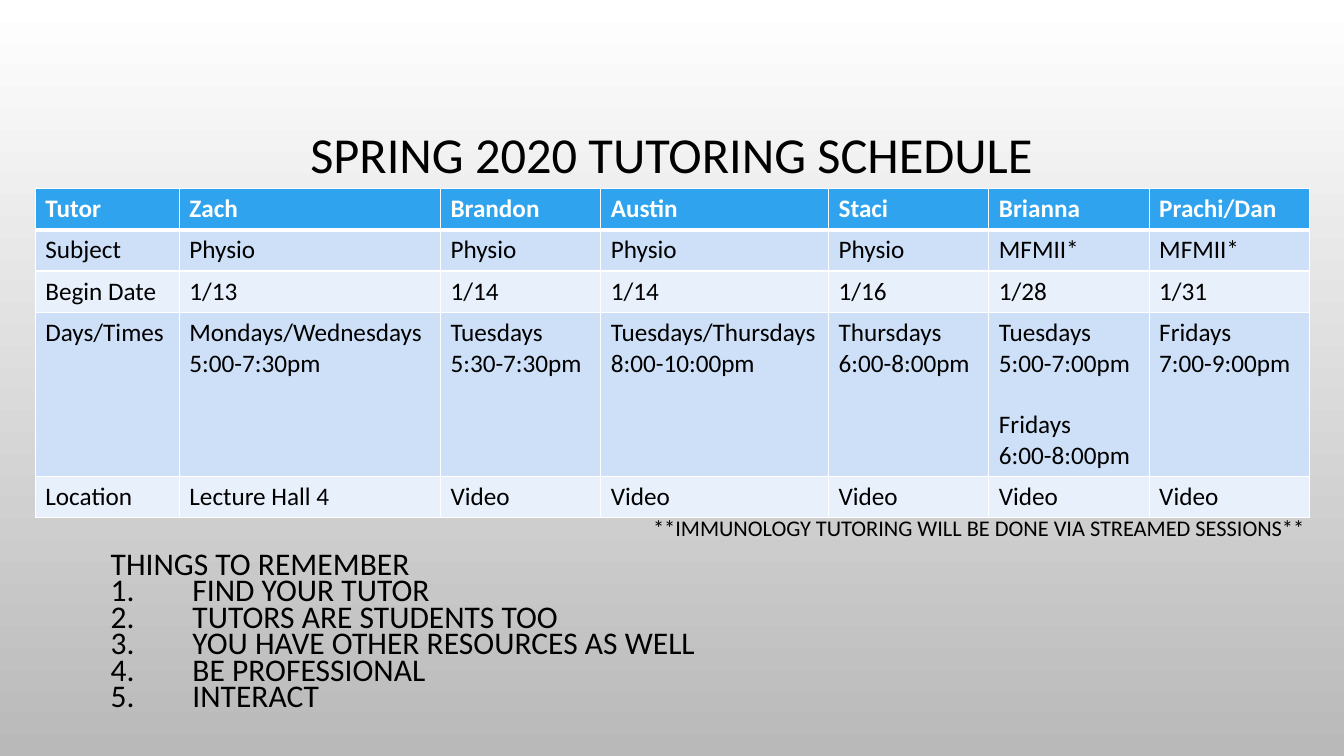
from lxml import etree
from pptx import Presentation
from pptx.dml.color import RGBColor
from pptx.enum.text import MSO_ANCHOR, MSO_AUTO_SIZE, PP_ALIGN
from pptx.oxml.ns import qn
from pptx.util import Cm, Pt

MIDDLE, TOP = MSO_ANCHOR.MIDDLE, MSO_ANCHOR.TOP
CENTER, LEFT = PP_ALIGN.CENTER, PP_ALIGN.LEFT
NO_AUTOFIT = MSO_AUTO_SIZE.NONE
TITLE_ONLY = 5

COLORS = {
    "text": "000000",
    "white": "FFFFFF",
    "backdrop_end": "B9B9B9",
    "header": "2FA3EE",
    "band_dark": "CDE0F8",
    "band_light": "E8F0FC",
}

# Each entry in a cell's list is a paragraph
SCHEDULE = [
    ["Tutor", "Zach", "Brandon", "Austin", "Staci", "Brianna", "Prachi/Dan"],
    ["Subject"] + ["Physio"] * 4 + ["MFMII*"] * 2,
    ["Begin Date", "1/13", "1/14", "1/14", "1/16", "1/28", "1/31"],
    ["Days/Times", "Mondays/Wednesdays\n5:00-7:30pm", "Tuesdays\n5:30-7:30pm",
     "Tuesdays/Thursdays\n8:00-10:00pm", "Thursdays\n6:00-8:00pm",
     ["Tuesdays\n5:00-7:00pm", "Fridays\n6:00-8:00pm"], "Fridays\n7:00-9:00pm"],
    ["Location", "Lecture Hall 4"] + ["Video"] * 5,
]
COLUMN_WIDTHS = [3.63, 6.58, 4.04, 5.74, 4.04, 4.04, 4.04]
ROW_HEIGHTS = [1.04, 1.04, 1.04, 4.11, 1.04]

REMINDERS = [
    "FIND YOUR TUTOR",
    "TUTORS ARE STUDENTS TOO",
    "YOU HAVE OTHER RESOURCES AS WELL",
    "BE PROFESSIONAL",
    "INTERACT",
]


def rgb(name):
    return RGBColor.from_string(COLORS[name])


def write(frame, paragraphs, size, font="Calibri", color="text", bold=False, align=LEFT,
          line_spacing=None, gap=0, numbered_from=None, indent=2.06):
    """Fill a text frame; paragraphs from index numbered_from on are numbered."""
    if isinstance(paragraphs, str):
        paragraphs = [paragraphs]
    for index, text in enumerate(paragraphs):
        paragraph = frame.paragraphs[0] if index == 0 else frame.add_paragraph()
        paragraph.text = text
        paragraph.alignment = align
        paragraph.line_spacing = line_spacing
        paragraph.space_before = Pt(gap if index else 0)
        if numbered_from is not None and index >= numbered_from:
            properties = paragraph._p.get_or_add_pPr()
            properties.set("marL", str(Cm(indent)))
            properties.set("indent", str(-Cm(indent)))
            etree.SubElement(properties, qn("a:buAutoNum"), type="arabicPeriod")
        for run in paragraph.runs:
            run.font.name = font
            run.font.size = Pt(size)
            run.font.bold = bold
            run.font.color.rgb = rgb(color)


def set_borders(cell, bottom=1):
    """Draw white cell borders; widths are in points."""
    properties = cell._tc.get_or_add_tcPr()
    widths = {"lnL": 1, "lnR": 1, "lnT": 1, "lnB": bottom}
    for position, (side, width) in enumerate(widths.items()):
        line = etree.Element(qn("a:" + side), w=str(Pt(width)))
        fill = etree.SubElement(line, qn("a:solidFill"))
        etree.SubElement(fill, qn("a:srgbClr"), val=COLORS["white"])
        properties.insert(position, line)


class ScheduleSlide:
    def __init__(self, presentation):
        self.slide = presentation.slides.add_slide(presentation.slide_layouts[TITLE_ONLY])

    def backdrop(self, start, end):
        fill = self.slide.background.fill
        fill.gradient()
        fill.gradient_angle = 270
        for stop, color in zip(fill.gradient_stops, (start, end)):
            stop.color.rgb = rgb(color)

    def place_text(self, holder, box, content, **text_format):
        holder.left, holder.top, holder.width, holder.height = map(Cm, box)
        frame = holder.text_frame
        frame.word_wrap = True
        frame.auto_size = NO_AUTOFIT
        frame.vertical_anchor = MIDDLE
        write(frame, content, **text_format)

    def title(self, box, content, **text_format):
        self.place_text(self.slide.shapes.title, box, content, **text_format)

    def text(self, box, content, **text_format):
        holder = self.slide.shapes.add_textbox(*map(Cm, box))
        self.place_text(holder, box, content, **text_format)

    def table(self, left, top, rows, widths, heights):
        table = self.slide.shapes.add_table(
            len(rows), len(widths), Cm(left), Cm(top),
            Cm(sum(widths)), Cm(sum(heights))).table
        for column, width in zip(table.columns, widths):
            column.width = Cm(width)
        for row, height in zip(table.rows, heights):
            row.height = Cm(height)
        for r, values in enumerate(rows):
            is_header = r == 0
            band = "header" if is_header else "band_dark" if r % 2 else "band_light"
            for c, value in enumerate(values):
                cell = table.cell(r, c)
                cell.fill.solid()
                cell.fill.fore_color.rgb = rgb(band)
                cell.vertical_anchor = TOP
                set_borders(cell, bottom=3 if is_header else 1)
                write(cell.text_frame, value, size=18, bold=is_header, gap=22,
                      color="white" if is_header else "text")


def main():
    presentation = Presentation()
    presentation.slide_width, presentation.slide_height = Cm(33.87), Cm(19.05)
    page = ScheduleSlide(presentation)
    page.backdrop("white", "backdrop_end")
    page.title((2.54, 1.73, 28.78, 4.45), "SPRING 2020 TUTORING SCHEDULE",
               size=36, align=CENTER, line_spacing=0.9)
    page.table(0.89, 4.75, SCHEDULE, COLUMN_WIDTHS, ROW_HEIGHTS)
    page.text((2.54, 13.74, 16.18, 4.45), ["THINGS TO REMEMBER"] + REMINDERS,
              size=22.5, line_spacing=0.7, numbered_from=1)
    page.text((16.21, 12.8, 17.27, 1.07),
              "**IMMUNOLOGY TUTORING WILL BE DONE VIA STREAMED SESSIONS**",
              size=16, line_spacing=0.9)
    presentation.save("out.pptx")


if __name__ == "__main__":
    main()
